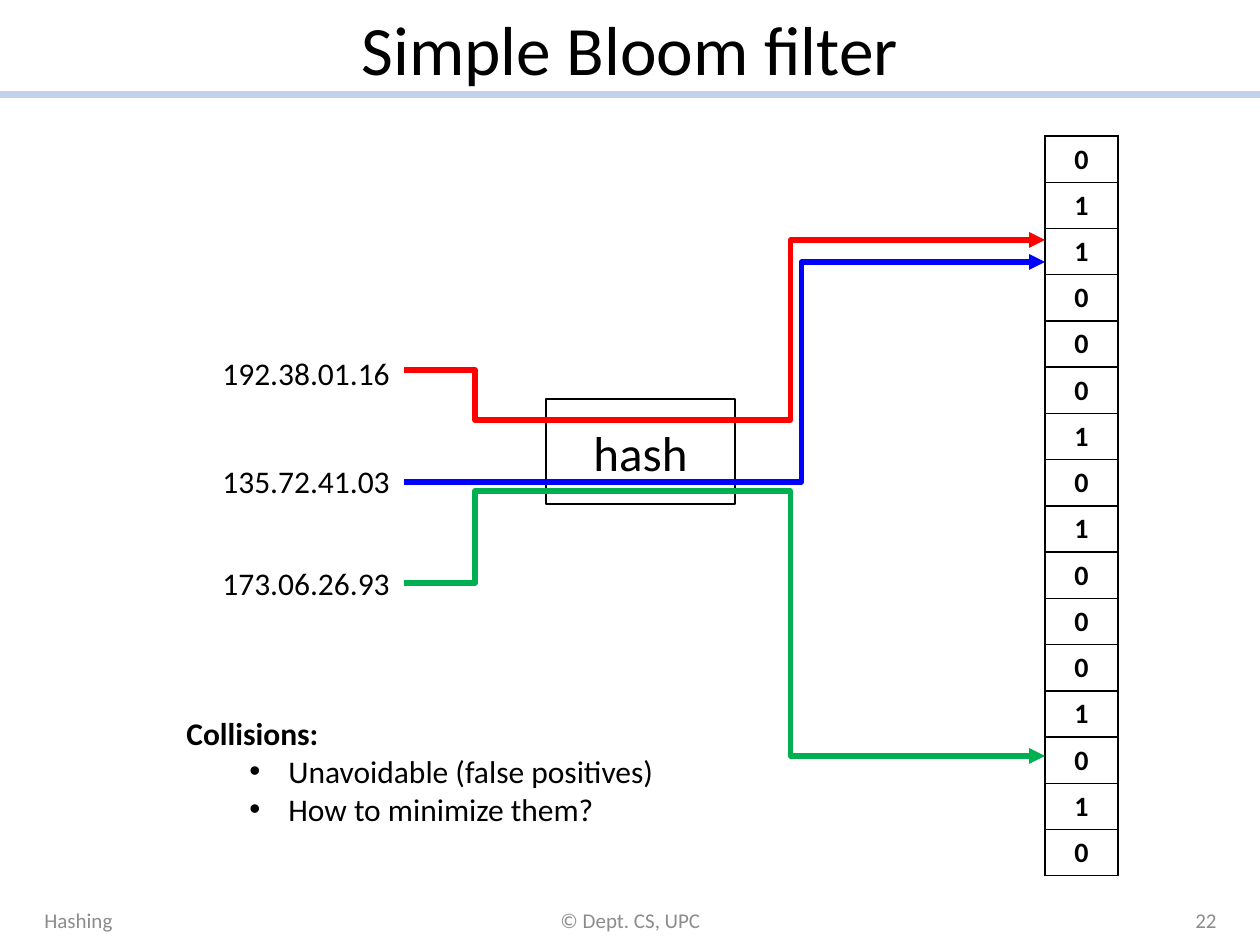
from dataclasses import dataclass

from lxml.etree import SubElement
from pptx import Presentation
from pptx.dml.color import RGBColor
from pptx.enum.shapes import MSO_CONNECTOR, MSO_SHAPE
from pptx.enum.text import MSO_ANCHOR, MSO_AUTO_SIZE, PP_ALIGN
from pptx.oxml import parse_xml
from pptx.oxml.ns import nsdecls, qn
from pptx.util import Emu, Pt

EMU_PER_PX = 914400 / 126


def px(length):
    return Emu(round(length * EMU_PER_PX))


@dataclass(frozen=True)
class Theme:
    font: str = "Calibri"
    ink: str = "000000"
    muted: str = "8C8C8C"
    rule: str = "C2D1ED"
    red: str = "FF0000"
    green: str = "00B050"
    blue: str = "0000FF"
    title: float = 39.6
    label: float = 28
    body: float = 18
    bit: float = 16
    footer: float = 12


THEME = Theme()


def write(para, text, size=THEME.body, color=THEME.ink, bold=False, align=PP_ALIGN.LEFT):
    para.alignment = align
    span = para.add_run()
    span.text = text
    span.font.name = THEME.font
    span.font.size = Pt(size)
    span.font.bold = bold
    span.font.color.rgb = RGBColor.from_string(color)


class Page:
    def __init__(self, deck, theme):
        self.theme = theme
        self.slide = deck.slides.add_slide(deck.slide_layouts[5])
        self.shapes = self.slide.shapes

    def title(self, text, left, top, width, height):
        box = self.shapes.title
        box.left, box.top, box.width, box.height = map(px, (left, top, width, height))
        frame = box.text_frame
        frame.auto_size = MSO_AUTO_SIZE.NONE
        frame.vertical_anchor = MSO_ANCHOR.MIDDLE
        write(frame.paragraphs[0], text, size=self.theme.title, align=PP_ALIGN.CENTER)

    def text(self, text, left, top, width, height, wrap=True,
             anchor=MSO_ANCHOR.TOP, **style):
        box = self.shapes.add_textbox(*map(px, (left, top, width, height)))
        frame = box.text_frame
        frame.word_wrap = wrap
        frame.vertical_anchor = anchor
        write(frame.paragraphs[0], text, **style)
        return frame

    def bullet(self, frame, text, margin, hanging):
        para = frame.add_paragraph()
        para.level = 1
        write(para, text)
        properties = para._p.get_or_add_pPr()
        properties.set("marL", str(px(margin)))
        properties.set("indent", str(-px(hanging)))
        SubElement(properties, qn("a:buFont"), typeface="Arial")
        SubElement(properties, qn("a:buChar"), char="•")

    def rectangle(self, text, left, top, width, height):
        box = self.shapes.add_shape(MSO_SHAPE.RECTANGLE, *map(px, (left, top, width, height)))
        box.shadow.inherit = False
        box.fill.background()
        box.line.color.rgb = RGBColor.from_string(self.theme.ink)
        box.line.width = Pt(1.5)
        box.text_frame.vertical_anchor = MSO_ANCHOR.MIDDLE
        write(box.text_frame.paragraphs[0], text, size=self.theme.label,
              align=PP_ALIGN.CENTER)

    def line(self, start, end, color, weight=3, kind=MSO_CONNECTOR.ELBOW,
             arrow=False, bend=None):
        line = self.shapes.add_connector(kind, *map(px, (*start, *end)))
        line.line.color.rgb = RGBColor.from_string(color)
        line.line.width = Pt(weight)
        properties = line._element.spPr
        SubElement(properties, qn("a:effectLst"))
        if arrow:
            SubElement(line.line._get_or_add_ln(), qn("a:tailEnd"), type="triangle")
        if bend is not None:
            guides = properties.find(qn("a:prstGeom")).get_or_add_avLst()
            SubElement(guides, qn("a:gd"), name="adj1", fmla=f"val {round(bend * 100000)}")

    def column(self, values, left, top, width, row_height):
        frame = self.shapes.add_table(len(values), 1, px(left), px(top), px(width),
                                      px(row_height * len(values)))
        table = frame.table
        table.first_row = table.horz_banding = False
        for row, value in zip(table.rows, values):
            row.height = px(row_height)
            cell = row.cells[0]
            cell.fill.background()
            write(cell.text_frame.paragraphs[0], value, size=self.theme.bit,
                  bold=True, align=PP_ALIGN.CENTER)
            properties = cell._tc.get_or_add_tcPr()
            for place, side in enumerate(("lnL", "lnR", "lnT", "lnB")):
                properties.insert(place, parse_xml(
                    f'<a:{side} {nsdecls("a")} w="{Pt(1)}"><a:solidFill>'
                    f'<a:srgbClr val="{self.theme.ink}"/></a:solidFill></a:{side}>'))


def main():
    deck = Presentation()
    deck.slide_width, deck.slide_height = px(1260), px(945)
    page = Page(deck, THEME)

    # Heading
    page.line((0, 95), (1260, 95), THEME.rule, weight=4, kind=MSO_CONNECTOR.STRAIGHT)
    page.title("Simple Bloom filter", 63, 0, 1134, 95)

    # Footer
    for text, left, width, align in (
        ("Hashing", 32, 294, PP_ALIGN.LEFT),
        ("© Dept. CS, UPC", 431, 399, PP_ALIGN.CENTER),
        ("22", 935, 294, PP_ALIGN.RIGHT),
    ):
        page.text(text, left, 895, width, 50, anchor=MSO_ANCHOR.MIDDLE,
                  size=THEME.footer, color=THEME.muted, align=align)

    # Bit array and hash function
    page.column("0110001010001010", 1045, 136, 73, 46)
    page.rectangle("hash", 546, 399, 189, 105)

    # Addresses
    for address, top in (("192.38.01.16", 348), ("173.06.26.93", 558),
                         ("135.72.41.03", 456)):
        page.text(address, 210, top, 194, 50, wrap=False)

    # Paths from each address through the hash to its bit
    for color, start, middle, end in ((THEME.red, 370, 420, 240),
                                      (THEME.green, 583, 491, 756)):
        page.line((404, start), (546, middle), color)
        page.line((536, middle), (1045, end), color, arrow=True)
    page.line((404, 482), (1045, 262), THEME.blue, arrow=True, bend=0.62)

    # Collisions
    notes = page.text("Collisions:", 174, 708, 505, 127, bold=True)
    for point in ("Unavoidable (false positives)", "How to minimize them?"):
        page.bullet(notes, point, margin=102, hanging=39)

    deck.save("out.pptx")


if __name__ == "__main__":
    main()
